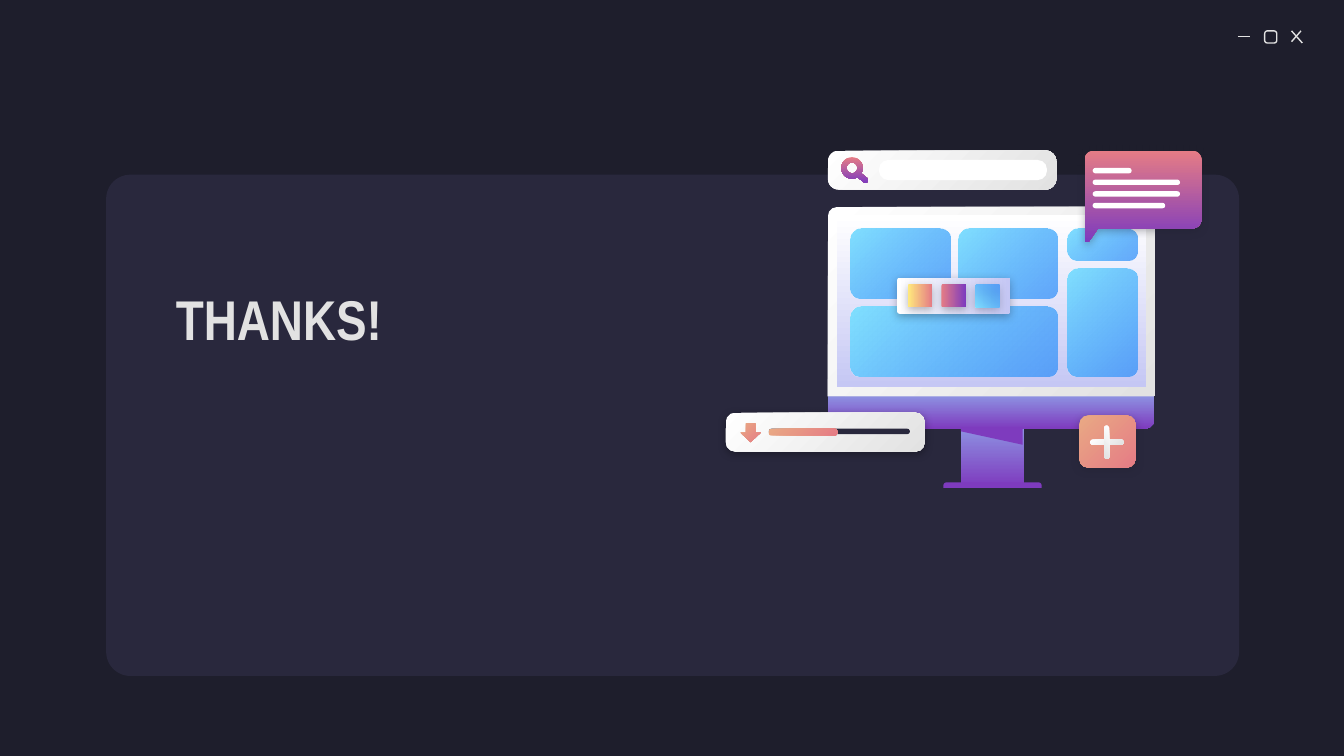
"""Build the closing slide with a window card and a screen drawing."""
from dataclasses import dataclass
from math import cos, radians, sin

from lxml import etree
from pptx import Presentation
from pptx.dml.color import RGBColor
from pptx.enum.shapes import MSO_CONNECTOR, MSO_SHAPE
from pptx.enum.text import MSO_ANCHOR
from pptx.oxml.ns import qn
from pptx.util import Inches, Pt

LINE = MSO_CONNECTOR.STRAIGHT
MIDDLE = MSO_ANCHOR.MIDDLE
ROUND = MSO_SHAPE.ROUNDED_RECTANGLE
TOP = MSO_SHAPE.ROUND_2_SAME_RECTANGLE
RECT = MSO_SHAPE.RECTANGLE
ARROW = MSO_SHAPE.DOWN_ARROW

HEX = {
    "night": "1E1E2C", "card": "29283D", "pale": "E2E2E2", "white": "FFFFFF",
    "lilac": "C5C7F4", "iris": "8D90E1", "purple": "7E3BBE", "sky": "80DFFF",
    "blue": "318FFA", "coral": "E57C85", "peach": "E9A984", "yellow": "FFEA7D",
    "black": "000000",
}
Loop = list[tuple[float, float]]


@dataclass(frozen=True)
class Blend:
    start: str
    end: str
    angle: int = 90
    alpha: int = 100


@dataclass(frozen=True)
class Box:
    x: float
    y: float
    w: float
    h: float
    fill: str | Blend
    rad: float = 0
    kind: int = ROUND
    turn: int = 0
    shade: str = ""
    adj: tuple[float, ...] = ()


METAL = Blend("white", "pale", 45)
GLASS = Blend("white", "lilac")
BASE = Blend("iris", "purple")
TILE = Blend("sky", "blue", 45, 72)
WARM = Blend("peach", "coral", 45)
DUSK = Blend("coral", "purple")

SCREEN = [
    Box(6.16, 1.54, 2.43, 1.41, METAL, 0.07, TOP),
    Box(6.16, 2.95, 2.43, 0.24, BASE, kind=TOP, adj=(0, 0.29)),
    Box(6.23, 1.6, 2.3, 1.28, GLASS, kind=RECT),
    Box(7.15, 3.19, 0.47, 0.43, BASE, kind=RECT),
    Box(7.02, 3.59, 0.73, 0.04, "purple", 0.02, TOP),
]
TILES = [
    Box(x, y, w, h, TILE, 0.08)
    for x, y, w, h in [
        (6.33, 1.7, 0.74, 0.52), (6.33, 2.28, 1.54, 0.52), (7.13, 1.7, 0.74, 0.52),
        (7.94, 1.7, 0.52, 0.24), (7.94, 2, 0.52, 0.8),
    ]
]
NOTES = [
    Box(8.13, 1.25 + 0.26 * row / 3, w, 0.04, "white", 0.02)
    for row, w in enumerate([0.29, 0.65, 0.65, 0.54])
]
LOADER = [
    Box(5.4, 3.07, 1.48, 0.29, METAL, 0.07, shade="black"),
    Box(5.72, 3.19, 1.05, 0.04, "card", 0.02),
    Box(5.72, 3.19, 0.51, 0.05, WARM, 0.02),
    Box(5.51, 3.15, 0.15, 0.14, WARM, kind=ARROW, adj=(0.47, 0.5)),
]
BUTTON = [Box(8.03, 3.09, 0.42, 0.39, WARM, 0.07, shade="night")] + [
    Box(8.11, 3.27, 0.25, 0.04, METAL, 0.02, turn=turn) for turn in (0, 90)
]
PALETTE = [Box(6.96, 1.78, 0.27, 0.84, GLASS, 0.02, turn=270, shade="night")] + [
    Box(6.76 + 0.25 * col, 2.11, 0.17, 0.18, fill, 0.01, turn=270, shade="night")
    for col, fill in enumerate([Blend("yellow", "coral"), DUSK, TILE])
]
BAR = Box(6.16, 1.12, 1.7, 0.29, METAL, 0.08)
FIELD = Box(6.54, 1.19, 1.25, 0.15, "white", 0.07)


def color(name: str) -> RGBColor:
    return RGBColor.from_string(HEX[name])


def style(shape, fill: str | Blend, shade: str = "") -> None:
    shape.line.fill.background()
    shape.shadow.inherit = False
    if isinstance(fill, Blend):
        shape.fill.gradient()
        shape.fill.gradient_angle = 360 - fill.angle
        for stop, name in zip(shape.fill.gradient_stops, (fill.start, fill.end)):
            stop.color.rgb = color(name)
        if fill.alpha < 100:
            last = list(shape._element.spPr.iter(qn("a:srgbClr")))[-1]
            etree.SubElement(last, qn("a:alpha"), val=str(fill.alpha * 1000))
    else:
        shape.fill.solid()
        shape.fill.fore_color.rgb = color(fill)
    if shade:
        effects = shape._element.spPr.find(qn("a:effectLst"))
        outer = etree.SubElement(
            effects, qn("a:outerShdw"), blurRad=str(Pt(4.5)), dist=str(Pt(1.5)),
            dir="5400000", algn="bl", rotWithShape="0",
        )
        tint = etree.SubElement(outer, qn("a:srgbClr"), val=HEX[shade])
        etree.SubElement(tint, qn("a:alpha"), val="30000")


def draw(slide, box: Box):
    shape = slide.shapes.add_shape(
        box.kind, Inches(box.x), Inches(box.y), Inches(box.w), Inches(box.h)
    )
    values = box.adj or ((min(0.5, box.rad / min(box.w, box.h)),) if box.rad else ())
    for index, value in enumerate(values):
        shape.adjustments[index] = value
    shape.rotation = box.turn
    style(shape, box.fill, box.shade)
    return shape


def trace(slide, loops: list[Loop], fill: str | Blend, shade: str = "") -> None:
    scaled = [[(Inches(x), Inches(y)) for x, y in loop] for loop in loops]
    pen = slide.shapes.build_freeform(*scaled[0][0])
    for index, loop in enumerate(scaled):
        if index:
            pen.move_to(*loop[0])
        pen.add_line_segments(loop[1:], close=True)
    style(pen.convert_to_shape(), fill, shade)


def bend(x: float, y: float, rad: float, start: int, sweep: int = 90) -> Loop:
    turns = [radians(start + step) for step in range(0, sweep + 1, 10)]
    return [(x + rad * cos(turn), y + rad * sin(turn)) for turn in turns]


def bubble(slide) -> None:
    rad = 0.07
    points = bend(8.14, 1.19, rad, 180) + bend(8.87, 1.19, rad, 270)
    points += bend(8.87, 1.63, rad, 0)
    points += [(8.17, 1.7), (8.1, 1.8), (8.08, 1.8), (8.07, 1.79)]
    trace(slide, [points], DUSK, "night")


def search(slide) -> None:
    draw(slide, BAR)
    rim = bend(6.34, 1.25, 0.08, 60, 330) + bend(6.44, 1.34, 0.02, -45, 180)
    trace(slide, [rim, bend(6.34, 1.25, 0.04, 0, 360)[::-1]], DUSK)
    draw(slide, FIELD)


def stroke(slide, x1: float, y1: float, x2: float, y2: float) -> None:
    line = slide.shapes.add_connector(LINE, Inches(x1), Inches(y1), Inches(x2), Inches(y2))
    line.line.color.rgb = color("pale")
    line.line.width = Pt(0.75)
    etree.SubElement(line._element.spPr, qn("a:effectLst"))


def window(slide) -> None:
    draw(slide, Box(0.79, 1.3, 8.43, 3.73, "card", 0.18))
    stroke(slide, 9.21, 0.27, 9.3, 0.27)
    frame = draw(slide, Box(9.41, 0.23, 0.09, 0.09, "night", 0.02))
    frame.fill.background()
    frame.line.color.rgb = color("pale")
    frame.line.width = Pt(0.75)
    stroke(slide, 9.61, 0.23, 9.69, 0.32)
    stroke(slide, 9.68, 0.23, 9.61, 0.31)


def title(slide) -> None:
    box = slide.shapes.add_textbox(Inches(1.21), Inches(1.9), Inches(4.69), Inches(0.94))
    frame = box.text_frame
    frame.word_wrap = True
    frame.vertical_anchor = MIDDLE
    frame.margin_left = frame.margin_right = Inches(0.1)
    frame.margin_top = frame.margin_bottom = Inches(0.1)
    line = frame.paragraphs[0]
    line.text = "THANKS!"
    line.font.name = "Arial Narrow"
    line.font.size = Pt(30)
    line.font.bold = True
    line.font.color.rgb = color("pale")


def main() -> None:
    deck = Presentation()
    deck.slide_width, deck.slide_height = Inches(10), Inches(10 * 9 / 16)
    slide = deck.slides.add_slide(deck.slide_layouts[6])
    slide.background.fill.solid()
    slide.background.fill.fore_color.rgb = color("night")
    window(slide)
    title(slide)
    for box in SCREEN:
        draw(slide, box)
    trace(slide, [[(7.15, 3.18), (7.15, 3.21), (7.61, 3.31), (7.61, 3.18)]], "purple")
    for box in TILES:
        draw(slide, box)
    bubble(slide)
    for box in NOTES + LOADER + BUTTON + PALETTE:
        draw(slide, box)
    search(slide)
    deck.save("out.pptx")


if __name__ == "__main__":
    main()
